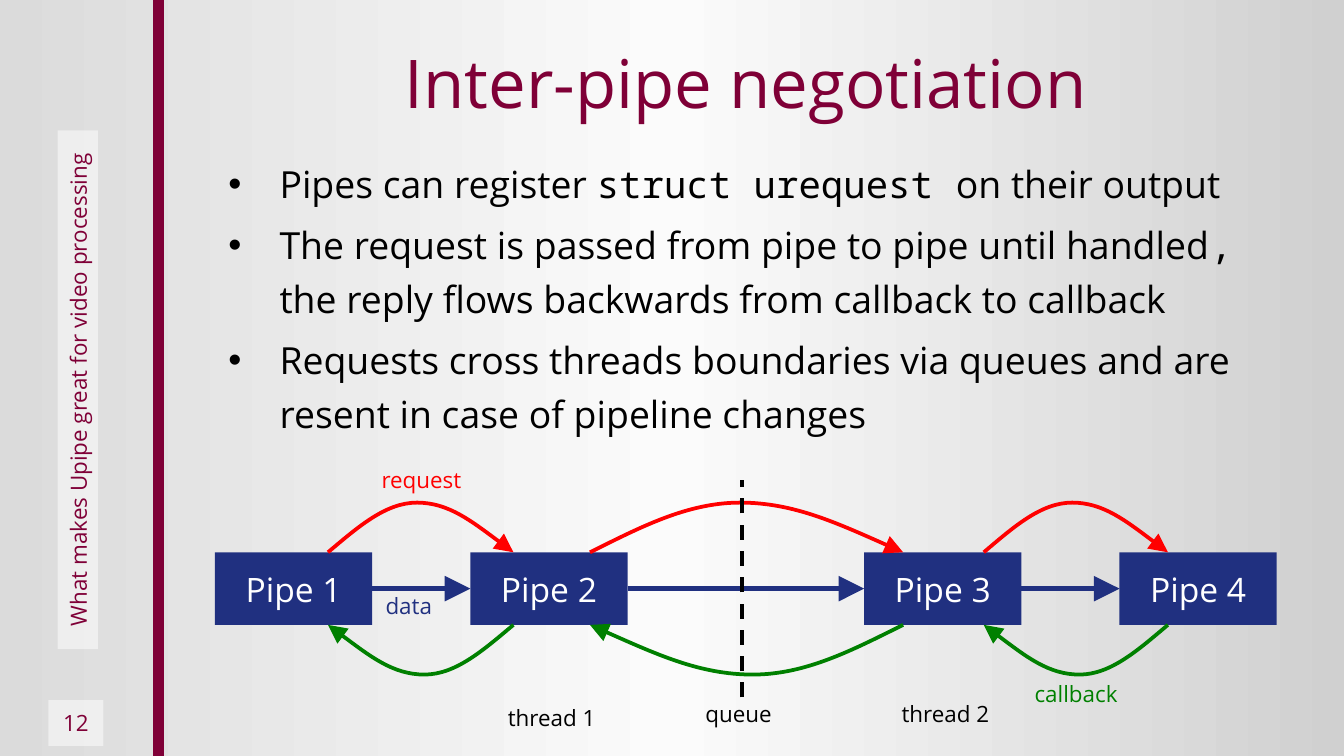
from copy import deepcopy
from lxml import etree
from pptx import Presentation
from pptx.dml.color import RGBColor
from pptx.enum.dml import MSO_LINE
from pptx.enum.shapes import MSO_CONNECTOR, MSO_SHAPE
from pptx.enum.text import MSO_ANCHOR, MSO_AUTO_SIZE, PP_ALIGN
from pptx.oxml.ns import qn
from pptx.util import Inches, Pt

RECT, LINE, DASH = MSO_SHAPE.RECTANGLE, MSO_CONNECTOR.STRAIGHT, MSO_LINE.DASH
MID, TOP, CENTER = MSO_ANCHOR.MIDDLE, MSO_ANCHOR.TOP, PP_ALIGN.CENTER
FIXED, GROW = MSO_AUTO_SIZE.NONE, MSO_AUTO_SIZE.SHAPE_TO_FIT_TEXT

THEME = {
    "sans": "Open Sans", "mono": "Noto Sans Mono",
    "wine": "7F0037", "navy": "203080", "red": "FF0000", "green": "008000",
    "black": "000000", "white": "FFFFFF", "plate": "F2F2F2",
    "back": [(0, "DBDBDB"), (50, "FBFBFB"), (100, "D0D0D0")],
    "title": 36, "body": 20, "pipe": 18, "small": 12,
}
TITLE = "Inter-pipe negotiation"
BODY = [
    [("Pipes can register ", "sans"), ("struct urequest ", "mono"),
     ("on their output", "sans")],
    [("The request is passed from pipe to pipe until handled", "sans"),
     (", ", "mono"),
     ("the reply flows backwards from callback to callback", "sans")],
    [("Requests cross threads boundaries via queues and are "
      "resent in case of pipeline changes", "sans")],
]
PLATES = [
    ("What makes Upipe great for video processing", (-1.35, 2.75, 3.86, 0.3), 270),
    ("12", (0.36, 5.21, 0.41, 0.34), 0),
]
PIPES = [("Pipe 1", 1.6), ("Pipe 2", 3.5), ("Pipe 3", 6.43), ("Pipe 4", 8.33)]
SPANS = [(2.44, 3.82), (4.39, 6.72), (7.32, 8.69)]
LABELS = [
    ("data", 2.77, 4.36, 0.55, "navy"), ("request", 2.74, 3.42, 0.81, "red"),
    ("callback", 7.6, 5.01, 0.83, "green"), ("queue", 5.15, 5.16, 0.71, "black"),
    ("thread 1", 3.68, 5.19, 0.86, "black"), ("thread 2", 6.61, 5.16, 0.86, "black"),
]
WIDE = 10
HIGH = WIDE * 9 / 16
LEFT, SPAN = 1.6, 7.9
ROW, PIPE_W, PIPE_H = 4.11, 1.17, 0.54
BEND = 0.37
CURVE = [(0, 0), (0.16, 0.5), (0.31, 1), (0.48, 1), (0.65, 1), (0.82, 0.5), (1, 0)]

deck = Presentation()
deck.slide_width, deck.slide_height = Inches(WIDE), Inches(HIGH)
slide = deck.slides.add_slide(deck.slide_layouts[1])
shapes = slide.shapes


def color(name):
    return RGBColor.from_string(THEME.get(name, name))


def area(*box):
    return [Inches(n) for n in box]


def place(shape, *box):
    shape.left, shape.top, shape.width, shape.height = area(*box)


def style(font, size, tint, face="sans"):
    font.size, font.name = Pt(THEME[size]), THEME[face]
    font.color.rgb = color(tint)


def stroke(shape, tint, width, head=False):
    shape.line.color.rgb, shape.line.width = color(tint), Pt(width)
    if head:
        etree.SubElement(shape.line._get_or_add_ln(), qn("a:tailEnd"),
                         type="triangle", w="lg", len="lg")


def join(x1, y1, x2, y2, tint, width, head=False):
    line = shapes.add_connector(LINE, *area(x1, y1, x2, y2))
    stroke(line, tint, width, head)
    etree.SubElement(line._element.spPr, qn("a:effectLst"))
    return line


def block(text, box, fill, size, tint):
    shape = shapes.add_shape(RECT, *area(*box))
    shape.shadow.inherit = False
    shape.fill.solid()
    shape.fill.fore_color.rgb = color(fill)
    shape.line.fill.background()
    frame = shape.text_frame
    frame.text, frame.vertical_anchor = text, MID
    frame.margin_left = frame.margin_right = 0
    frame.margin_top = frame.margin_bottom = 0
    para = frame.paragraphs[0]
    para.alignment = CENTER
    style(para.runs[0].font, size, tint)
    return shape


def arc(start, end, base, rise, tint):
    dots = [area(start + (end - start) * u, base + rise * v) for u, v in CURVE]
    pen = shapes.build_freeform(*dots[0], scale=1.0)
    pen.add_line_segments(dots[1:], close=False)
    shape = pen.convert_to_shape()
    shape.shadow.inherit = False
    shape.fill.background()
    stroke(shape, tint, 2, True)
    legs = list(shape._element.iter(qn("a:lnTo")))
    for i in range(0, len(legs), 3):
        bow = etree.Element(qn("a:cubicBezTo"))
        legs[i].addprevious(bow)
        for leg in legs[i:i + 3]:
            bow.append(leg[0])
            leg.getparent().remove(leg)


fill = slide.background.fill
fill.gradient()
fill.gradient_angle = 0
stops = next(slide._element.iter(qn("a:gsLst")))
stops.insert(1, deepcopy(stops[0]))
for stop, (pos, tint) in zip(fill.gradient_stops, THEME["back"]):
    stop.position, stop.color.rgb = pos / 100, color(tint)

join(1.18, 0, 1.18, HIGH, "wine", 6)

title, body = slide.placeholders
place(title, LEFT, 0.23, SPAN, 0.75)
title.text_frame.text = TITLE
title.text_frame.auto_size, title.text_frame.vertical_anchor = FIXED, MID
para = title.text_frame.paragraphs[0]
para.alignment = CENTER
style(para.runs[0].font, "title", "wine")

place(body, LEFT, 1.08, SPAN, 2.3)
frame = body.text_frame
frame.auto_size, frame.vertical_anchor = FIXED, TOP
for i, runs in enumerate(BODY):
    para = frame.add_paragraph() if i else frame.paragraphs[0]
    props = para._p.get_or_add_pPr()
    props.set("marL", str(Inches(0.38)))
    props.set("indent", str(-Inches(0.38)))
    etree.SubElement(props, qn("a:buChar"), char="•")
    para.line_spacing, para.space_before = 1.2, Pt(4 if i else 0)
    for text, face in runs:
        run = para.add_run()
        run.text = text
        style(run.font, "body", "black", face)

for text, box, turn in PLATES:
    plate = block(text, box, "plate", "small", "wine")
    plate.rotation = turn
    tone = next(plate._element.spPr.iter(qn("a:srgbClr")))
    etree.SubElement(tone, qn("a:alpha"), val="85000")

for text, x in PIPES:
    block(text, (x, ROW, PIPE_W, PIPE_H), "navy", "pipe", "white")
for (_, x1), (_, x2) in zip(PIPES, PIPES[1:]):
    join(x1 + PIPE_W, ROW + PIPE_H / 2, x2, ROW + PIPE_H / 2, "navy", 2.75, True)
for x1, x2 in SPANS:
    arc(x1, x2, ROW, -BEND, "red")
    arc(x2, x1, ROW + PIPE_H, BEND, "green")

join(5.52, 5.19, 5.52, 3.57, "black", 2).line.dash_style = DASH

for text, x, y, width, tint in LABELS:
    frame = shapes.add_textbox(*area(x, y, width, 0.3)).text_frame
    frame.text, frame.word_wrap, frame.auto_size = text, False, GROW
    style(frame.paragraphs[0].runs[0].font, "small", tint)

deck.save("out.pptx")
